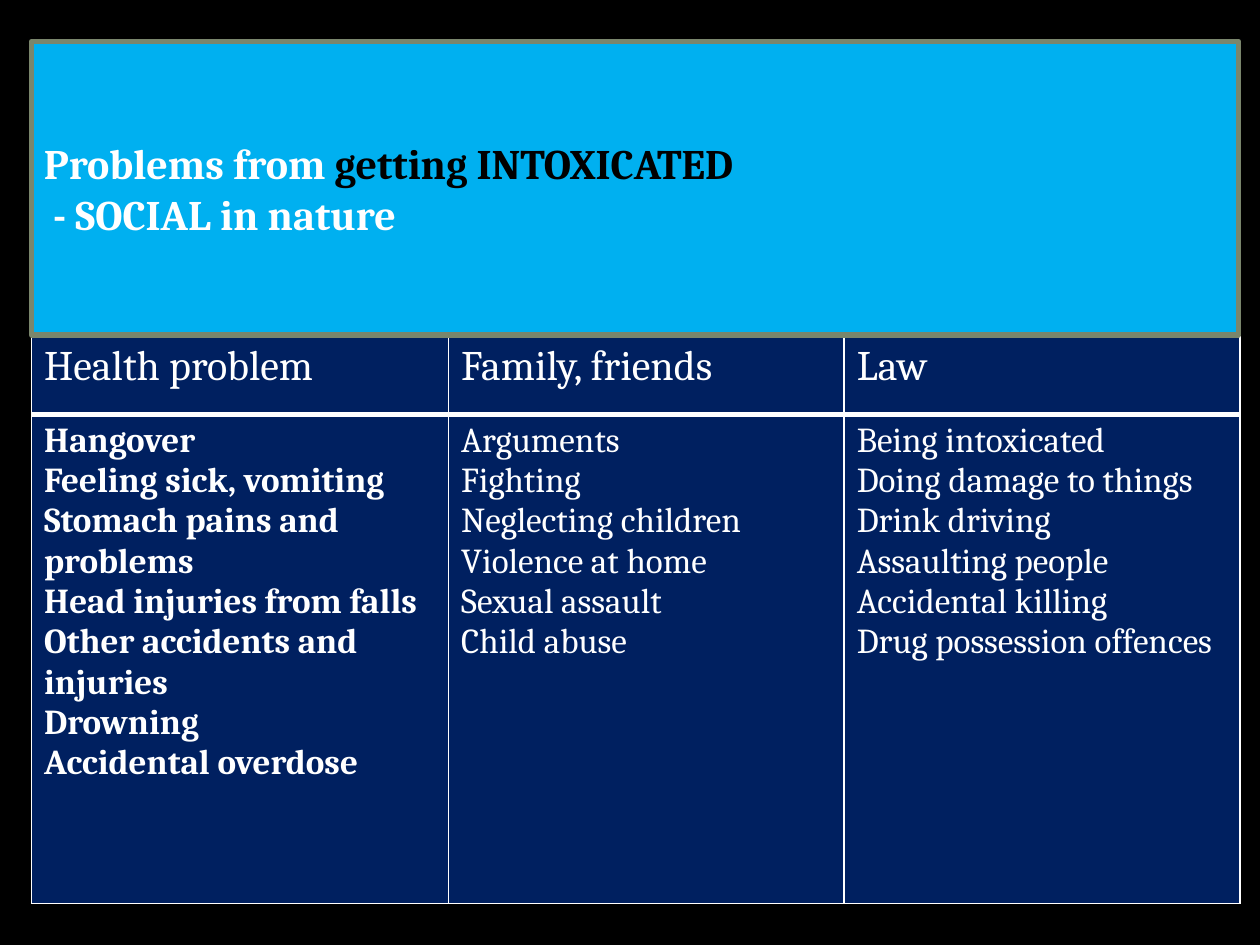
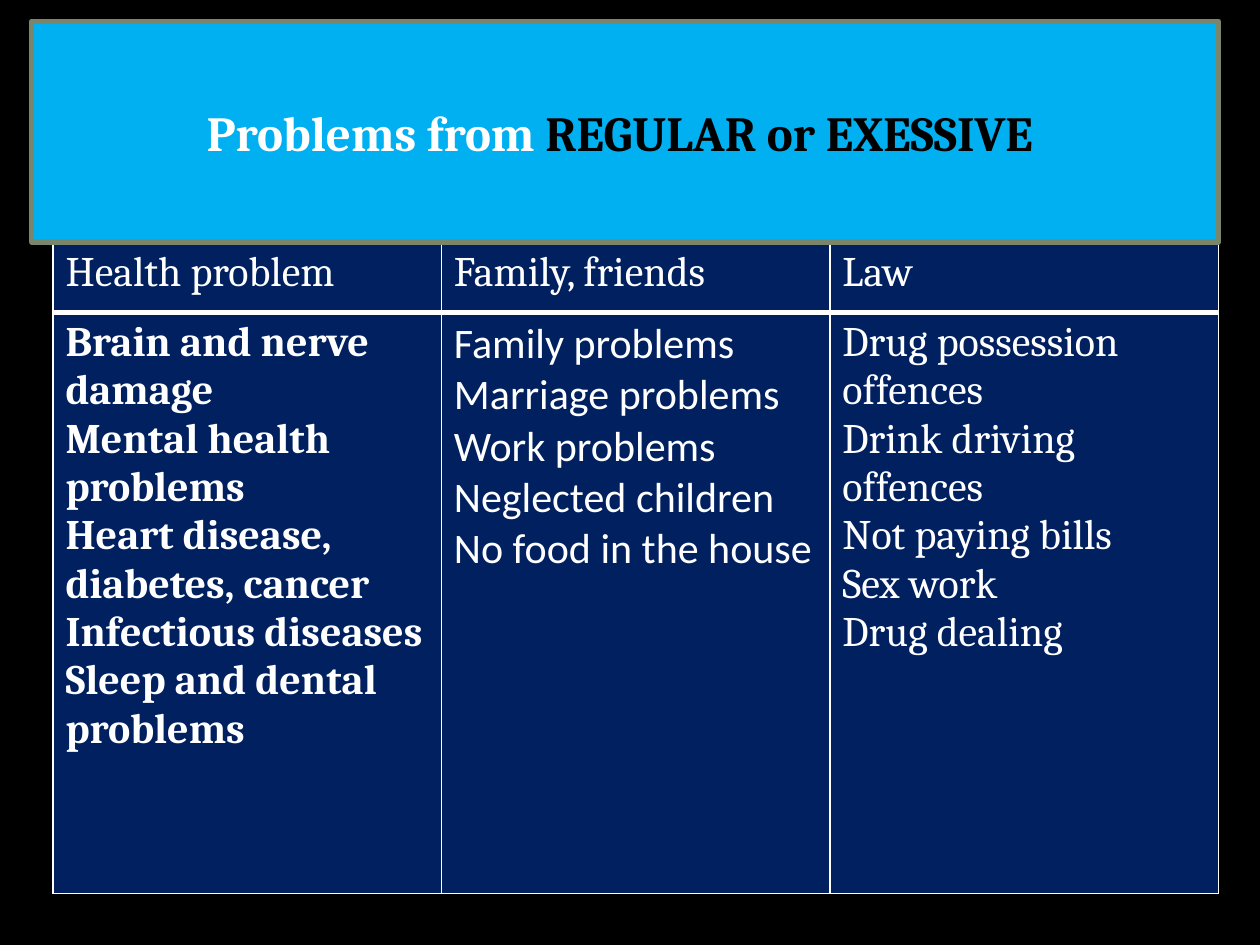
from dataclasses import dataclass

from lxml.etree import SubElement
from pptx import Presentation
from pptx.dml.color import RGBColor
from pptx.enum.shapes import MSO_SHAPE as Shape
from pptx.enum.text import MSO_ANCHOR as Anchor, PP_ALIGN as Align
from pptx.oxml.ns import qn
from pptx.util import Inches, Pt


# Theme: colours, fonts and type sizes
@dataclass(frozen=True)
class Theme:
    black: RGBColor = RGBColor(0x00, 0x00, 0x00)
    white: RGBColor = RGBColor(0xFF, 0xFF, 0xFF)
    navy: RGBColor = RGBColor(0x00, 0x20, 0x60)
    sky: RGBColor = RGBColor(0x00, 0xB0, 0xF0)
    sage: RGBColor = RGBColor(0x7A, 0x86, 0x6C)
    serif: str = "Cambria"
    sans: str = "Calibri"
    small: int = 20
    medium: int = 24
    large: int = 28
    thin: int = 1
    thick: int = 3


HEADINGS = ["Health problem", "Family, friends", "Law"]


class SlideBuilder:
    """Holds the theme and the current slide."""

    def __init__(self, deck, theme):
        self.deck, self.theme, self.page = deck, theme, None

    def new_page(self):
        self.page = self.deck.slides.add_slide(self.deck.slide_layouts[6])
        fill = self.page.background.fill
        fill.solid()
        fill.fore_color.rgb = self.theme.black

    def add_lines(self, frame, lines, size, font=None, bold=False, align=Align.LEFT):
        """Each line is a list of (text, colour) spans."""
        style = {"name": font or self.theme.serif, "size": Pt(size), "bold": bold}
        for index, line in enumerate(lines):
            para = frame.add_paragraph() if index else frame.paragraphs[0]
            para.alignment = align
            for text, colour in line:
                span = para.add_run()
                span.text = text
                for name, value in style.items():
                    setattr(span.font, name, value)
                span.font.color.rgb = colour

    def title_band(self, place, lines, size, align=Align.LEFT):
        band = self.page.shapes.add_shape(Shape.RECTANGLE, *map(Inches, place))
        band.shadow.inherit = False
        band.fill.solid()
        band.fill.fore_color.rgb = self.theme.sky
        band.line.color.rgb = self.theme.sage
        band.line.width = Pt(self.theme.thick)
        frame = band.text_frame
        frame.word_wrap = True
        frame.vertical_anchor = Anchor.MIDDLE
        self.add_lines(frame, lines, size, bold=True, align=align)

    def cell_borders(self, cell, widths):
        """Draw the white borders; widths maps a side (L, R, T, B) to points."""
        properties = cell._tc.get_or_add_tcPr()
        for side, width in widths.items():
            line = SubElement(properties, qn(f"a:ln{side}"), w=str(Pt(width)))
            fill = SubElement(line, qn("a:solidFill"))
            SubElement(fill, qn("a:srgbClr"), val=str(self.theme.white))

    def cell(self, cell, lines, borders, size, **style):
        self.cell_borders(cell, borders)
        cell.fill.solid()
        cell.fill.fore_color.rgb = self.theme.navy
        spans = [[(line, self.theme.white)] for line in lines]
        self.add_lines(cell.text_frame, spans, size, **style)

    def problem_table(self, place, widths, heights, columns, size, fonts):
        theme = self.theme
        table = self.page.shapes.add_table(
            len(heights), len(widths), *map(Inches, place)).table
        table.first_row = table.horz_banding = False
        for column, width in zip(table.columns, widths):
            column.width = Inches(width)
        for row, height in zip(table.rows, heights):
            row.height = Inches(height)
        thin_sides = dict.fromkeys("LRTB", theme.thin)
        for index, (heading, lines) in enumerate(zip(HEADINGS, columns)):
            self.cell(table.cell(0, index), [heading],
                      thin_sides | {"B": theme.thick}, theme.medium)
            self.cell(table.cell(1, index), lines,
                      thin_sides | {"T": theme.thick}, size,
                      font=fonts[index], bold=index == 0)


def main():
    deck = Presentation()
    deck.slide_width, deck.slide_height = Inches(10), Inches(7.5)
    theme = Theme()
    build = SlideBuilder(deck, theme)

    # Slide 1: problems from getting intoxicated
    build.new_page()
    build.problem_table(
        (0.25, 2.67, 9.59, 4.5), [3.31, 3.14, 3.14], [0.62, 3.88],
        [["Hangover", "Feeling sick, vomiting", "Stomach pains and problems",
          "Head injuries from falls", "Other accidents and injuries",
          "Drowning", "Accidental overdose"],
         ["Arguments", "Fighting", "Neglecting children", "Violence at home",
          "Sexual assault", "Child abuse"],
         ["Being intoxicated", "Doing damage to things", "Drink driving",
          "Assaulting people", "Accidental killing",
          "Drug possession offences"]],
        theme.small, [theme.serif] * 3)
    build.title_band(
        (0.25, 0.33, 9.58, 2.33),
        [[("Problems from ", theme.white), ("getting INTOXICATED", theme.black)],
         [(" - SOCIAL in nature", theme.white)]],
        theme.medium)

    # Slide 2: problems from regular or excessive use
    build.new_page()
    build.problem_table(
        (0.42, 1.92, 9.25, 5.17), [9.25 / 3] * 3, [0.56, 4.61],
        [["Brain and nerve damage", "Mental health problems",
          "Heart disease, diabetes, cancer", "Infectious diseases",
          "Sleep and dental problems"],
         ["Family problems Marriage problems",
          "Work problems Neglected children No food in the house"],
         ["Drug possession offences", "Drink driving offences",
          "Not paying bills", "Sex work", "Drug dealing"]],
        theme.medium, [theme.serif, theme.sans, theme.serif])
    build.title_band(
        (0.25, 0.17, 9.42, 1.75),
        [[("Problems from ", theme.white), ("REGULAR or EXESSIVE ", theme.black)]],
        theme.large, Align.CENTER)

    deck.save("out.pptx")


if __name__ == "__main__":
    main()
